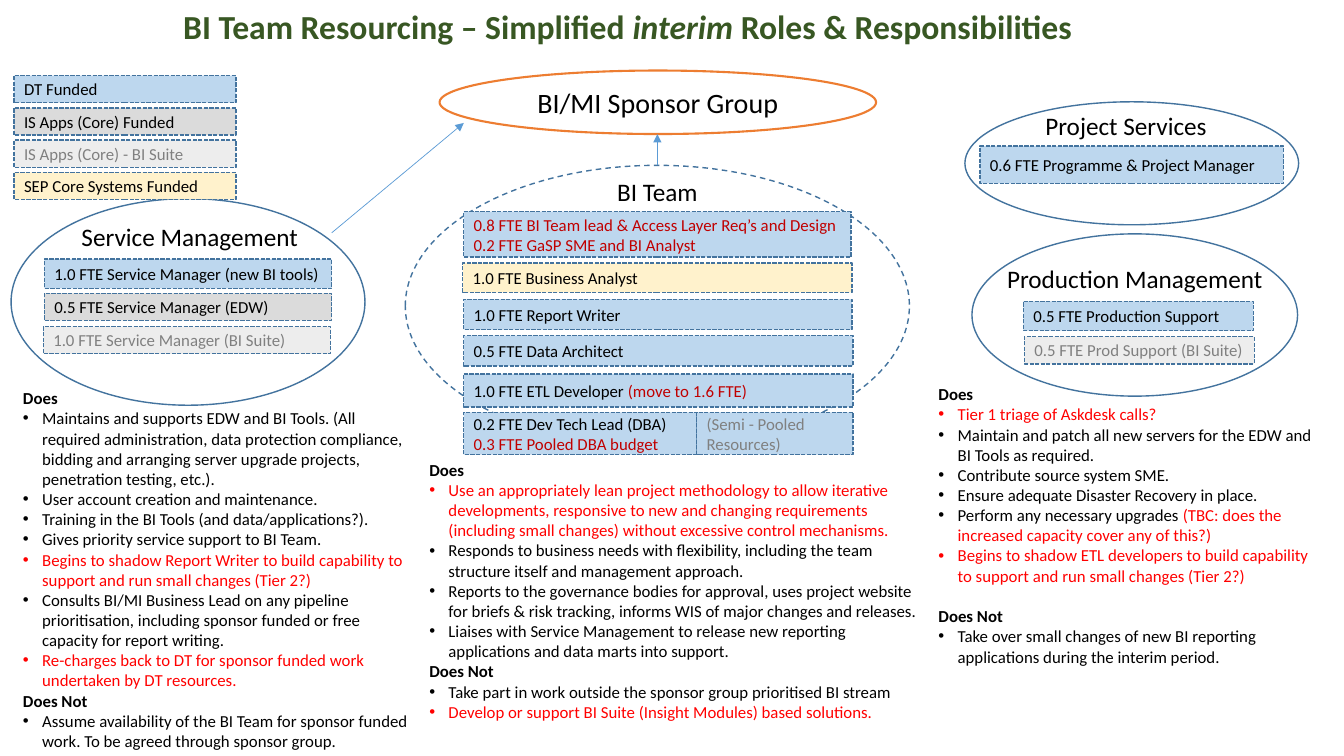
from dataclasses import dataclass

from lxml import etree
from pptx import Presentation
from pptx.dml.color import RGBColor
from pptx.enum import dml, shapes, text
from pptx.oxml.ns import qn
from pptx.util import Emu, Pt

PX = 9144  # one px is a hundredth of an inch


@dataclass(frozen=True)
class Theme:
    font: str = "Calibri"
    title: str = "385723"
    black: str = "000000"
    grey: str = "808080"
    dark_red: str = "C00000"
    red: str = "FF0000"
    outline: str = "43739E"
    arrow: str = "5B9BD5"
    sponsor: str = "ED7D31"
    dt: str = "BDD7EE"
    core: str = "DBDBDB"
    suite: str = "EDEDED"
    sep: str = "FFF2CC"
    title_size: int = 24
    sponsor_size: int = 20
    heading_size: int = 18
    body_size: int = 12
    line_gap: float = 14.6


THEME = Theme()


def px(*lengths):
    return [Emu(length * PX) for length in lengths]


def rgb(colour):
    return RGBColor.from_string(colour)


def write(para, spans, size, bold=False):
    """Fill a paragraph from (wording, colour) pairs."""
    for wording, colour in spans:
        span = para.add_run()
        span.text = wording
        span.font.name = THEME.font
        span.font.size = Pt(size)
        span.font.bold = bold
        span.font.color.rgb = rgb(colour)


def add_outline(page, kind, area, colour=THEME.outline, weight=1, dash=None, fill=None):
    shape = page.shapes.add_shape(kind, *px(*area))
    shape.shadow.inherit = False
    if fill:
        shape.fill.solid()
        shape.fill.fore_color.rgb = rgb(fill)
    else:
        shape.fill.background()
    shape.line.color.rgb = rgb(colour)
    shape.line.width = Pt(weight)
    if dash:
        shape.line.dash_style = dash
    return shape


def add_ellipse(page, area, **style):
    return add_outline(page, shapes.MSO_SHAPE.OVAL, area, **style)


def add_role(page, area, fill, *lines):
    """Draw a dashed bar; each line is a list of (wording, colour) pairs."""
    bar = add_outline(page, shapes.MSO_SHAPE.RECTANGLE, area,
                      dash=dml.MSO_LINE.SQUARE_DOT, fill=fill)
    frame = bar.text_frame
    frame.vertical_anchor = text.MSO_ANCHOR.MIDDLE
    for index, spans in enumerate(lines):
        para = frame.add_paragraph() if index else frame.paragraphs[0]
        para.alignment = text.PP_ALIGN.LEFT
        write(para, spans, THEME.body_size)


def add_text_box(page, area):
    frame = page.shapes.add_textbox(*px(*area)).text_frame
    frame.word_wrap = True
    return frame


def add_heading(page, area, wording, align=text.PP_ALIGN.LEFT):
    para = add_text_box(page, area).paragraphs[0]
    para.alignment = align
    write(para, [(wording, THEME.black)], THEME.heading_size)


def set_bullet(para):
    props = para._p.get_or_add_pPr()
    props.set("marL", str(19 * PX))
    props.set("indent", str(-19 * PX))
    etree.SubElement(props, qn("a:buFont"), typeface="Arial")
    etree.SubElement(props, qn("a:buChar"), char="•")


def add_duties(page, area, does, does_not, gap=0):
    frame = add_text_box(page, area)
    first = frame.paragraphs[0]
    for label, duties in (("Does", does), ("Does Not", does_not)):
        para = first if label == "Does" else frame.add_paragraph()
        if para is not first:
            para.space_before = Pt(gap)
        write(para, [(label, THEME.black)], THEME.body_size, bold=True)
        for spans in duties:
            para = frame.add_paragraph()
            set_bullet(para)
            write(para, spans, THEME.body_size)


def add_arrow(page, start, end):
    arrow = page.shapes.add_connector(shapes.MSO_CONNECTOR.STRAIGHT, *px(*start, *end))
    arrow.line.color.rgb = rgb(THEME.arrow)
    arrow.line.width = Pt(0.5)
    etree.SubElement(arrow.line._get_or_add_ln(), qn("a:tailEnd"), type="triangle")
    etree.SubElement(arrow._element.spPr, qn("a:effectLst"))
    return arrow


def plain(wording):
    return [(wording, THEME.black)]


def grey(wording):
    return [(wording, THEME.grey)]


def dark_red(wording):
    return [(wording, THEME.dark_red)]


def red(wording):
    return [(wording, THEME.red)]


def add_title(page):
    frame = add_text_box(page, (21, 5, 1203, 46))
    frame.vertical_anchor = text.MSO_ANCHOR.MIDDLE
    para = frame.paragraphs[0]
    para.alignment = text.PP_ALIGN.CENTER
    para.line_spacing = 0.9
    wordings = ("BI Team Resourcing – Simplified ", "interim", " Roles & Responsibilities")
    write(para, [(wording, THEME.title) for wording in wordings], THEME.title_size, bold=True)
    para.runs[1].font.italic = True


def add_legend(page):
    entries = ((THEME.dt, plain("DT Funded")),
               (THEME.core, plain("IS Apps (Core) Funded")),
               (THEME.suite, grey("IS Apps (Core) - BI Suite")),
               (THEME.sep, plain("SEP Core Systems Funded")))
    for index, (fill, spans) in enumerate(entries):
        add_role(page, (14, 75 + 32 * index, 220, 27), fill, spans)


def add_service_management(page):
    add_ellipse(page, (11, 197, 351, 205))
    add_heading(page, (71, 215, 261, 40), "Service Management")
    add_role(page, (44, 257, 285, 29), THEME.dt, plain("1.0 FTE Service Manager (new BI tools)"))
    add_role(page, (44, 291, 285, 27), THEME.core, plain("0.5 FTE Service Manager (EDW)"))
    add_role(page, (43, 324, 285, 27), THEME.suite, grey("1.0 FTE Service Manager (BI Suite)"))
    add_duties(page, (13, 380, 403, 374), [
        plain("Maintains and supports EDW and BI Tools. (All required administration, data protection "
              "compliance, bidding and arranging server upgrade projects, penetration testing, etc.)."),
        plain("User account creation and maintenance."),
        plain("Training in the BI Tools (and data/applications?)."),
        plain("Gives priority service support to BI Team."),
        red("Begins to shadow Report Writer to build capability to support and run small changes (Tier 2?)"),
        plain("Consults BI/MI Business Lead on any pipeline prioritisation, including sponsor funded "
              "or free capacity for report writing."),
        red("Re-charges back to DT for sponsor funded work undertaken by DT resources."),
    ], [plain("Assume availability of the BI Team for sponsor funded work. "
              "To be agreed through sponsor group.")])


def add_bi_team(page):
    team = add_ellipse(page, (402, 164, 500, 279), dash=dml.MSO_LINE.DASH)
    add_heading(page, (502, 170, 300, 40), "BI Team", text.PP_ALIGN.CENTER)
    add_role(page, (460, 210, 384, 45), THEME.dt,
             dark_red("0.8 FTE BI Team lead & Access Layer Req’s and Design"),
             dark_red("0.2 FTE GaSP SME and BI Analyst"))
    add_role(page, (459, 261, 386, 29), THEME.sep, plain("1.0 FTE Business Analyst"))
    add_role(page, (460, 297, 385, 30), THEME.dt, plain("1.0 FTE Report Writer"))
    add_role(page, (460, 333, 386, 30), THEME.dt, plain("0.5 FTE Data Architect"))
    add_role(page, (460, 371, 386, 33), THEME.dt,
             plain("1.0 FTE ETL Developer ") + dark_red("(move to 1.6 FTE)"))
    add_role(page, (460, 409, 231, 42), THEME.dt,
             plain("0.2 FTE Dev Tech Lead (DBA)"), dark_red("0.3 FTE Pooled DBA budget"))
    add_role(page, (691, 409, 155, 42), THEME.dt, grey("(Semi - Pooled Resources)"))
    add_duties(page, (416, 451, 504, 273), [
        red("Use an appropriately lean project methodology to allow iterative developments, responsive to "
            "new and changing requirements (including small changes) without excessive control mechanisms."),
        plain("Responds to business needs with flexibility, including the team structure itself "
              "and management approach."),
        plain("Reports to the governance bodies for approval, uses project website for briefs & risk "
              "tracking, informs WIS of major changes and releases."),
        plain("Liaises with Service Management to release new reporting applications and data marts "
              "into support."),
    ], [plain("Take part in work outside the sponsor group prioritised BI stream"),
        red("Develop or support BI Suite (Insight Modules) based solutions.")])
    return team


def add_production_management(page):
    add_ellipse(page, (964, 232, 323, 161))
    add_heading(page, (989, 256, 300, 40), "Production Management")
    add_role(page, (1015, 299, 228, 29), THEME.dt, plain("0.5 FTE Production Support"))
    add_role(page, (1016, 334, 228, 27), THEME.suite, grey("0.5 FTE Prod Support (BI Suite)"))
    add_duties(page, (921, 376, 403, 313), [
        red("Tier 1 triage of Askdesk calls?"),
        plain("Maintain and patch all new servers for the EDW and BI Tools as required."),
        plain("Contribute source system SME."),
        plain("Ensure adequate Disaster Recovery in place."),
        plain("Perform any necessary upgrades ") + red("(TBC: does the increased capacity cover any of this?)"),
        red("Begins to shadow ETL developers to build capability to support and run small changes (Tier 2?)"),
    ], [plain("Take over small changes of new BI reporting applications during the interim period.")],
        gap=THEME.line_gap)


def add_project_services(page):
    add_ellipse(page, (957, 101, 331, 122))
    add_heading(page, (1027, 105, 190, 40), "Project Services")
    add_role(page, (972, 145, 301, 37), THEME.dt, plain("0.6 FTE Programme & Project Manager"))


def add_sponsor_group(page):
    sponsor = add_ellipse(page, (436, 70, 433, 63), colour=THEME.sponsor, weight=1.5)
    para = sponsor.text_frame.paragraphs[0]
    para.alignment = text.PP_ALIGN.CENTER
    write(para, plain("BI/MI Sponsor Group"), THEME.sponsor_size)


def main():
    deck = Presentation()
    deck.slide_width, deck.slide_height = px(1333, 750)
    page = deck.slides.add_slide(deck.slide_layouts[6])
    add_title(page)
    add_service_management(page)
    team = add_bi_team(page)
    add_production_management(page)
    add_project_services(page)
    add_legend(page)
    add_sponsor_group(page)
    add_arrow(page, (652, 164), (652, 133)).begin_connect(team, 0)
    add_arrow(page, (329, 231), (460, 122))
    deck.save("out.pptx")


if __name__ == "__main__":
    main()
